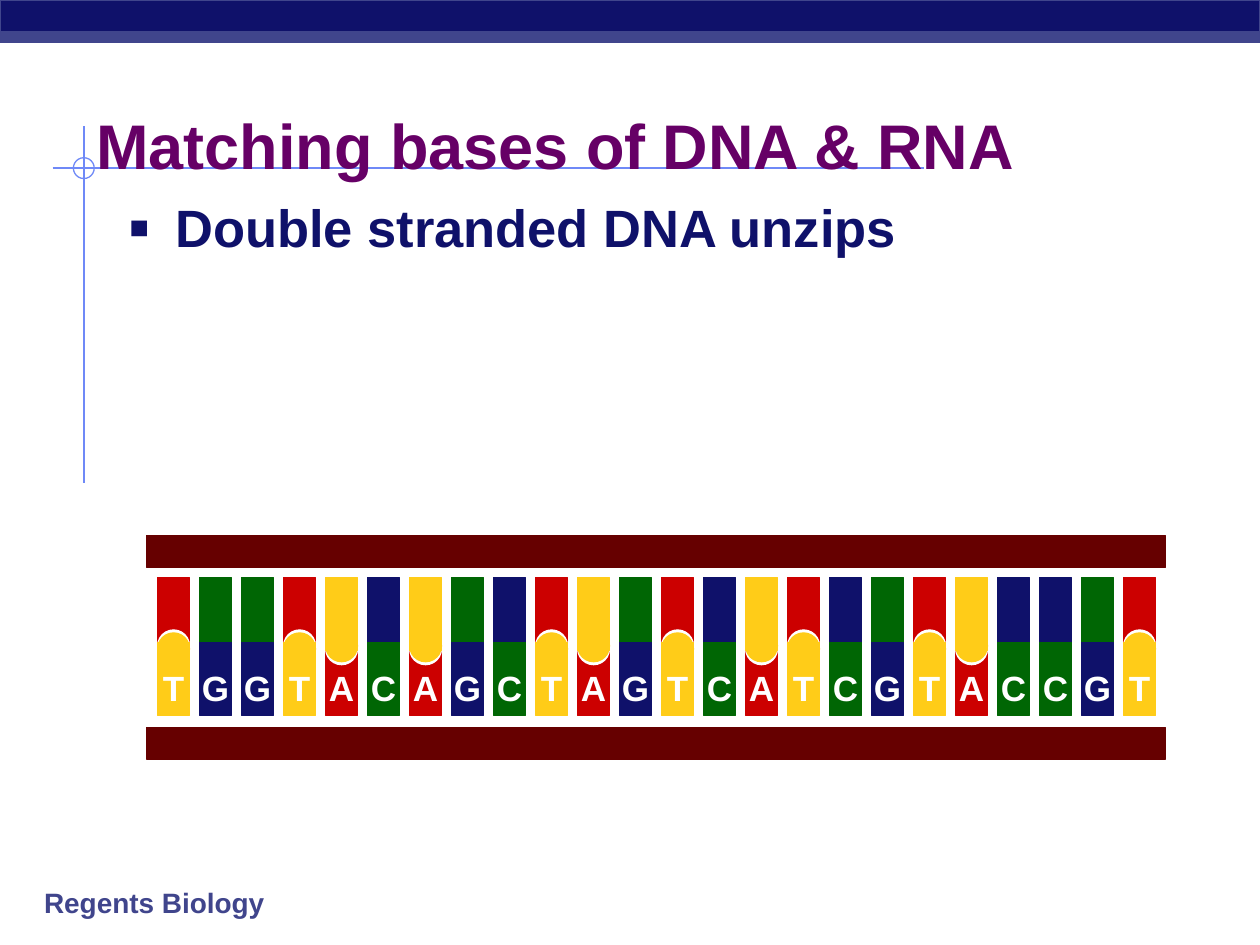
from lxml import etree
from pptx import Presentation
from pptx import util as u
from pptx.dml.color import RGBColor
from pptx.enum import shapes, text
from pptx.oxml.ns import qn

NAVY = RGBColor(0x0F, 0x11, 0x6A)
SLATE = RGBColor(0x40, 0x45, 0x8C)
SKY = RGBColor(0x6F, 0x89, 0xF7)
PURPLE = RGBColor(0x66, 0x00, 0x66)
MAROON = RGBColor(0x66, 0x00, 0x00)
GREEN = RGBColor(0x00, 0x66, 0x04)
RED = RGBColor(0xCC, 0x00, 0x00)
GOLD = RGBColor(0xFF, 0xCC, 0x18)
WHITE = RGBColor(0xFF, 0xFF, 0xFF)

HEADING = "Matching bases of DNA & RNA"
POINT = "Double stranded DNA unzips"
COURSE = "Regents Biology"
SEQUENCE = "TGGTACAGCTAGTCATCGTACCGT"

BASE_COLORS = {"T": GOLD, "A": RED, "G": NAVY, "C": GREEN}
PARTNERS = {"T": "A", "A": "T", "G": "C", "C": "G"}
PARTNER_COLORS = {"T": RED, "A": GOLD, "G": GREEN, "C": NAVY}
LETTER_WIDTHS = {"T": 0.94, "A": 1.02, "G": 1.07, "C": 1.02}

CROSSHAIR = [((1.06, 3.39), (18.63, 3.39)), ((1.69, 2.54), (1.69, 9.74))]
BANNER = [((0, 0, 25.4, 0.85), NAVY), ((0, 0.64, 25.4, 0.21), SLATE)]
BACKBONES = [(2.96, 10.8, 20.53, 0.64), (2.96, 14.66, 20.53, 0.64)]

RUNG_LEFT, RUNG_PITCH, RUNG_WIDTH, HALF_HEIGHT = 3.18, 2.54 / 3, 0.64, 1.48
UPPER = {"top": 11.64, "joint": 12.7}
LOWER = {"top": 12.95, "joint": 12.76}
LETTER_TOP, LETTER_HEIGHT = 13.31, 1.1

LETTER_FRAME = {"word_wrap": False, "auto_size": text.MSO_AUTO_SIZE.SHAPE_TO_FIT_TEXT,
                "vertical_anchor": text.MSO_ANCHOR.MIDDLE}
COURSE_FRAME = {**LETTER_FRAME, "word_wrap": True}
TITLE_FRAME = {"word_wrap": True, "auto_size": text.MSO_AUTO_SIZE.NONE,
               "vertical_anchor": text.MSO_ANCHOR.TOP, "margin_top": u.Cm(0.25)}
BODY_FRAME = {**TITLE_FRAME, "margin_top": u.Cm(0.13)}


def cm(lengths):
    return [u.Cm(length) for length in lengths]


def add_block(parent, preset, box, fill, outline, weight=0.75):
    block = parent.add_shape(preset, *cm(box))
    block.shadow.inherit = False
    if fill is None:
        block.fill.background()
    else:
        block.fill.solid()
        block.fill.fore_color.rgb = fill
    block.line.color.rgb = outline
    block.line.width = u.Pt(weight)


def write(holder, words, size, color, frame_format, align=text.PP_ALIGN.LEFT):
    frame = holder.text_frame
    for name, value in frame_format.items():
        setattr(frame, name, value)
    paragraph = frame.paragraphs[0]
    paragraph.alignment = align
    run = paragraph.add_run()
    run.text = words
    for name, value in {"name": "Arial", "size": u.Pt(size), "bold": True}.items():
        setattr(run.font, name, value)
    run.font.color.rgb = color
    return paragraph


def place(holder, box):
    for name, value in zip(("left", "top", "width", "height"), cm(box)):
        setattr(holder, name, value)


def add_bullet(paragraph):
    paragraph.space_before = u.Pt(2)
    properties = paragraph._p.get_or_add_pPr()
    properties.set("marL", str(u.Cm(0.95)))
    properties.set("indent", str(u.Cm(-0.95)))
    color = etree.SubElement(properties, qn("a:buClr"))
    etree.SubElement(color, qn("a:srgbClr"), val=str(NAVY))
    etree.SubElement(properties, qn("a:buSzPct"), val="120000")
    etree.SubElement(properties, qn("a:buFont"), typeface="Arial")
    etree.SubElement(properties, qn("a:buChar"), char="▪")


def add_half(tree, left, half, color, joint_color):
    parent = tree.add_group_shape().shapes if joint_color is not None else tree
    add_block(parent, shapes.MSO_SHAPE.RECTANGLE,
              (left, half["top"], RUNG_WIDTH, HALF_HEIGHT), color, color)
    if joint_color is not None:
        add_block(parent, shapes.MSO_SHAPE.OVAL,
                  (left, half["joint"], RUNG_WIDTH, RUNG_WIDTH), joint_color, joint_color)


def add_rung(tree, position, base):
    left = RUNG_LEFT + position * RUNG_PITCH
    halves = [(UPPER, PARTNERS[base], PARTNER_COLORS[base]), (LOWER, base, BASE_COLORS[base])]
    joints = {RED: WHITE, GOLD: GOLD}
    for half, _, color in sorted(halves, key=lambda part: part[2] == GOLD):
        add_half(tree, left, half, color, joints.get(color))
    width = LETTER_WIDTHS[base]
    letter = tree.add_textbox(*cm((left + (RUNG_WIDTH - width) / 2, LETTER_TOP,
                                   width, LETTER_HEIGHT)))
    write(letter, base, 20, WHITE, LETTER_FRAME, text.PP_ALIGN.CENTER)


def main():
    deck = Presentation()
    deck.slide_width, deck.slide_height = cm((25.4, 19.05))
    slide = deck.slides.add_slide(deck.slide_layouts[1])
    tree = slide.shapes
    title, body = slide.placeholders

    for start, end in CROSSHAIR:
        hair = tree.add_connector(shapes.MSO_CONNECTOR.STRAIGHT, *cm(start + end))
        hair.line.color.rgb = SKY
        hair.line.width = u.Pt(1)
        etree.SubElement(hair._element.spPr, qn("a:effectLst"))
    add_block(tree, shapes.MSO_SHAPE.OVAL, (1.48, 3.18, 0.42, 0.42), None, SKY)
    for box, color in BANNER:
        add_block(tree, shapes.MSO_SHAPE.RECTANGLE, box, color, SLATE)
    course = tree.add_textbox(*cm((0.64, 17.73, 5.08, 0.94)))
    write(course, COURSE, 16, SLATE, COURSE_FRAME)

    for holder, box in ((title, (1.69, 1.9, 21.59, 2.12)), (body, (2.33, 3.81, 21.38, 5.93))):
        place(holder, box)
        tree._spTree.append(holder._element)
    write(title, HEADING, 36, PURPLE, TITLE_FRAME)
    add_bullet(write(body, POINT, 30, NAVY, BODY_FRAME))

    for box in BACKBONES:
        add_block(tree, shapes.MSO_SHAPE.RECTANGLE, box, MAROON, MAROON)
    for position, base in enumerate(SEQUENCE):
        add_rung(tree, position, base)
    deck.save("out.pptx")


if __name__ == "__main__":
    main()
